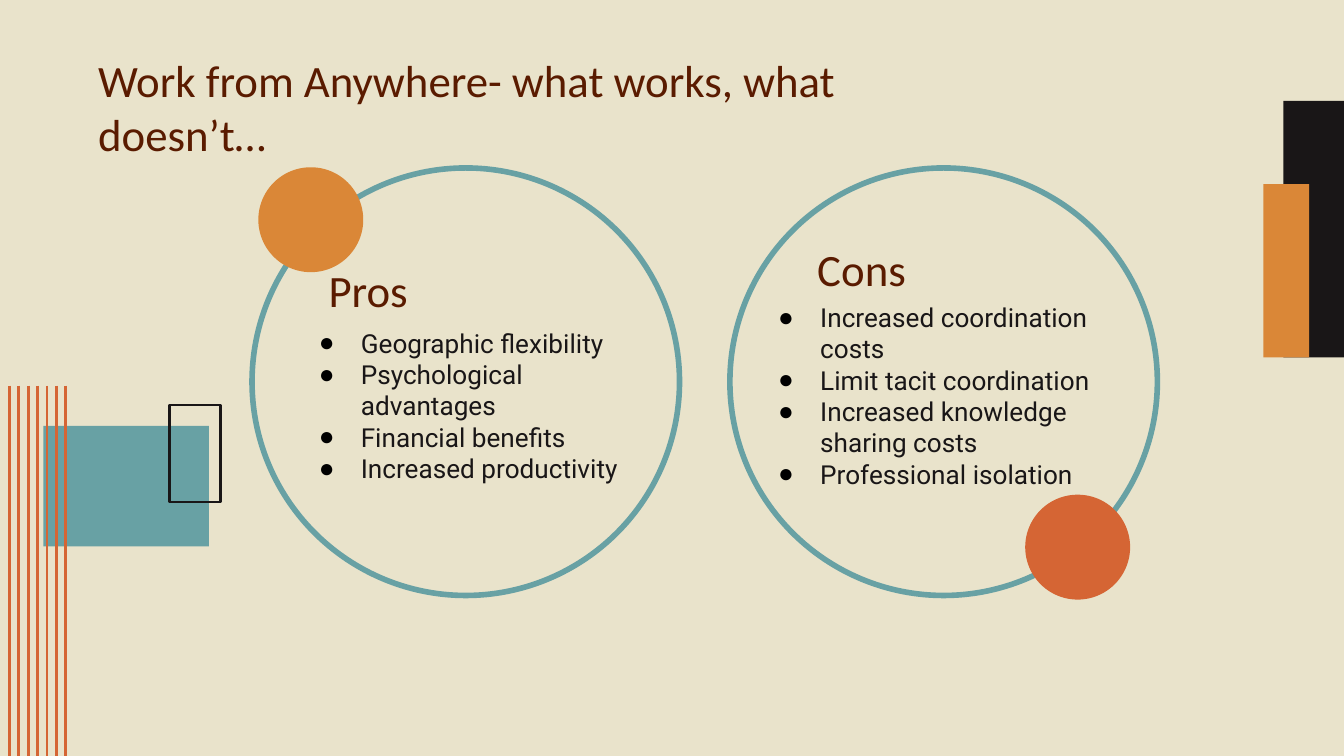
from dataclasses import dataclass

from lxml.etree import SubElement
from pptx import Presentation
from pptx.dml.color import RGBColor
from pptx.enum.shapes import MSO_CONNECTOR as Link, MSO_SHAPE as Form
from pptx.enum.text import MSO_ANCHOR as Anchor, MSO_AUTO_SIZE as Fit, PP_ALIGN as Align
from pptx.oxml.ns import qn
from pptx.util import Pt

SAND, INK, BROWN = "E9E3CB", "191617", "5A1B00"
TEAL, AMBER, RUST = "68A1A4", "DA8737", "D56534"
INDENT = 22.5


@dataclass
class Box:
    left: float
    top: float
    width: float
    height: float

    def points(self) -> tuple:
        return Pt(self.left), Pt(self.top), Pt(self.width), Pt(self.height)


@dataclass
class Shape:
    form: Form
    box: Box
    fill: str = ""
    line: str = ""
    weight: float = 0


@dataclass
class Panel:
    head: str
    items: list[str]
    head_box: Box
    list_box: Box


def paint(target, color: str) -> None:
    """Give a fill, or the fill of a line, one solid colour."""
    target.solid()
    target.fore_color.rgb = RGBColor.from_string(color)


def draw(slide, part: Shape) -> None:
    shape = slide.shapes.add_shape(part.form, *part.box.points())
    shape.shadow.inherit = False
    if part.fill:
        paint(shape.fill, part.fill)
    else:
        shape.fill.background()
    if part.line:
        paint(shape.line.fill, part.line)
        shape.line.width = Pt(part.weight)
    else:
        shape.line.fill.background()


def stripe(slide, x: float, top: float, end: float) -> None:
    line = slide.shapes.add_connector(Link.STRAIGHT, Pt(x), Pt(top), Pt(x), Pt(end))
    paint(line.line.fill, RUST)
    line.line.width = Pt(1.5)
    SubElement(line._element.spPr, qn("a:effectLst"))


def bullet(para) -> None:
    props = para._p.get_or_add_pPr()
    props.set("marL", str(Pt(INDENT)))
    props.set("indent", str(-Pt(INDENT)))
    color = SubElement(props, qn("a:buClr"))
    SubElement(color, qn("a:srgbClr")).set("val", "000000")
    SubElement(props, qn("a:buChar")).set("char", "●")


def write(holder, box: Box, text: str, font: str, size: float, color: str,
          listed: bool = False) -> None:
    holder.left, holder.top, holder.width, holder.height = box.points()
    frame = holder.text_frame
    frame.text = text
    frame.word_wrap = True
    frame.auto_size = Fit.NONE
    frame.vertical_anchor = Anchor.TOP
    frame.margin_left = frame.margin_right = Pt(7.2)
    frame.margin_top = frame.margin_bottom = Pt(7.2)
    for para in frame.paragraphs:
        para.alignment = Align.LEFT
        para.space_before = Pt(0)
        if listed:
            bullet(para)
        for run in para.runs:
            run.font.name = font
            run.font.size = Pt(size)
            run.font.bold = False
            run.font.color.rgb = RGBColor.from_string(color)


# Side decorations
SIDES = [
    Shape(Form.RECTANGLE, Box(687.5, 54, 36.5, 137.5), INK),
    Shape(Form.RECTANGLE, Box(676.8, 98.6, 24.6, 92.9), AMBER),
    Shape(Form.RECTANGLE, Box(23.3, 228.2, 88.6, 64.6), TEAL),
    Shape(Form.RECTANGLE, Box(90.7, 217, 27.3, 52), line=INK, weight=1.5),
]

# Large rings, each with a small dot
RINGS = [Shape(Form.OVAL, Box(x, 90, 229, 229), line=TEAL, weight=3)
         for x in (135, 391)]
DOTS = [Shape(Form.OVAL, Box(x, y, 56.2, 56.2), color)
        for x, y, color in ((138.4, 89.6, AMBER), (549.2, 265, RUST))]

PANELS = [
    Panel("Pros",
          ["Geographic flexibility", "Psychological advantages",
           "Financial benefits", "Increased productivity"],
          Box(168.8, 133.4, 150, 32), Box(163.6, 168, 191.5, 104.4)),
    Panel("Cons",
          ["Increased coordination costs", "Limit tacit coordination",
           "Increased knowledge sharing costs", "Professional isolation"],
          Box(430.6, 122.4, 150, 32), Box(409.7, 154.2, 191.5, 104.4)),
]


def main() -> None:
    deck = Presentation()
    deck.slide_width, deck.slide_height = Pt(720), Pt(405)
    slide = deck.slides.add_slide(deck.slide_layouts.get_by_name("Comparison"))
    paint(slide.background.fill, SAND)

    # Title, headings and lists
    title, *rest = slide.placeholders
    write(title, Box(45.4, 20.9, 495, 58),
          "Work from Anywhere- what works, what doesn’t…", "Calibri", 24, BROWN)
    for panel, head, body in zip(PANELS, rest[::2], rest[1::2]):
        write(head, panel.head_box, panel.head, "Calibri", 24, BROWN)
        write(body, panel.list_box, "\n".join(panel.items), "Roboto", 14, INK, True)

    # Shapes and stripes
    for part in SIDES + RINGS + DOTS:
        draw(slide, part)
    for step in range(1, 8):
        stripe(slide, 5.04 * step, 206.6, 405)

    deck.save("out.pptx")


if __name__ == "__main__":
    main()
